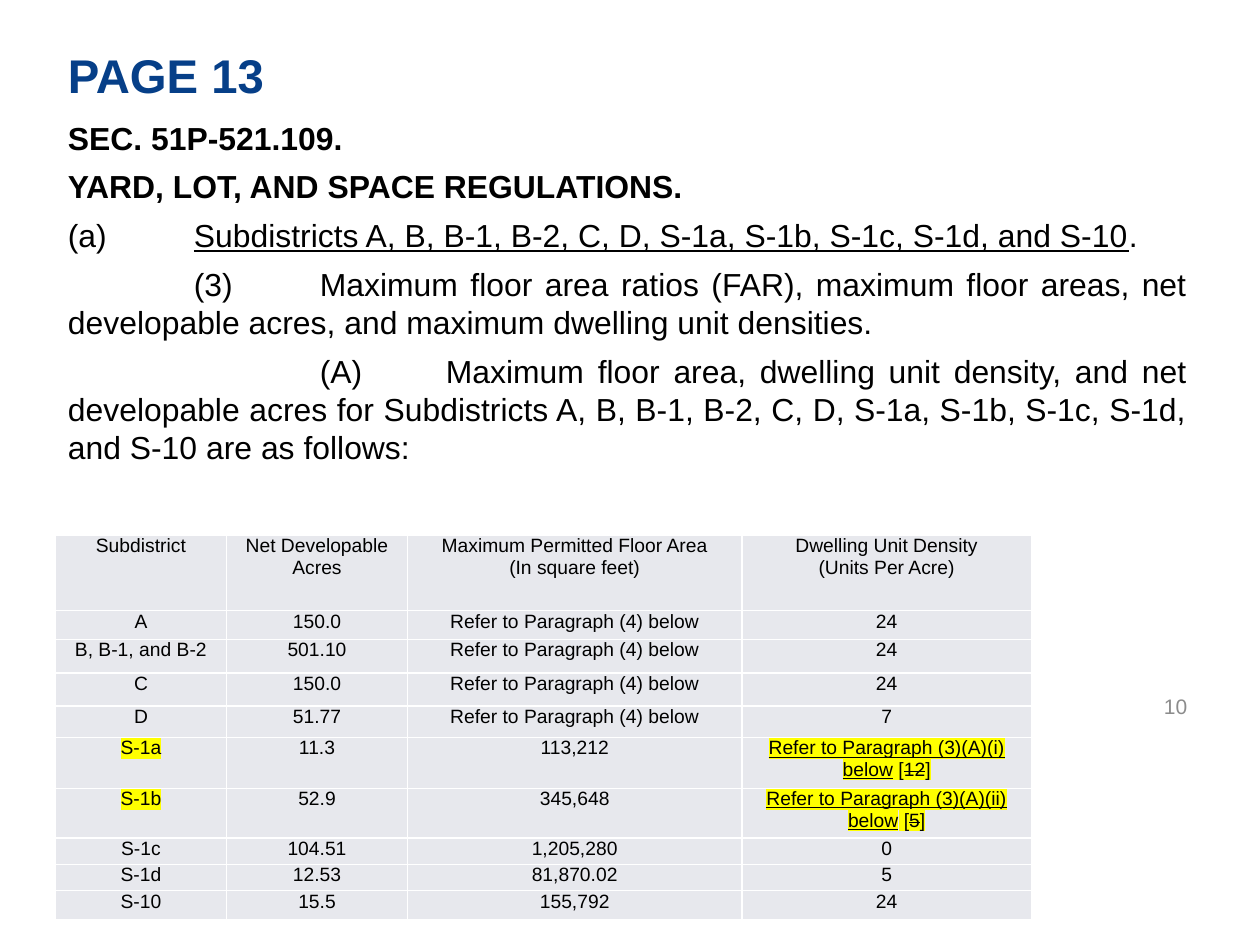
"""Build the slide on yard, lot and space regulations with its subdistrict table."""
import lxml.etree
import pptx
import pptx.dml.color
import pptx.enum.text
import pptx.oxml
import pptx.oxml.ns
import pptx.util

Pt = pptx.util.Pt
ALIGN = pptx.enum.text.PP_ALIGN
ANCHOR = pptx.enum.text.MSO_ANCHOR

THEME = {
    "font": "Arial",
    "title": "063F88", "text": "000000", "number": "8C8C8C",
    "cell": "E7E8ED", "border": "FFFFFF", "highlight": "FFFF00",
    "title_size": 27, "body_size": 18.2, "number_size": 12, "cell_size": 11,
}

TITLE = [[("PAGE 13", "bold")]]
NUMBER = [[("10", "")]]
BODY = [
    [("SEC. 51P-521.109.", "bold")],
    [("YARD, LOT, AND SPACE REGULATIONS.", "bold")],
    [("(a)\t", ""),
     ("Subdistricts A, B, B-1, B-2, C, D, S-1a, S-1b, S-1c, S-1d, and S-10", "underline"),
     (".", "")],
    [("\t(3)\tMaximum floor area ratios (FAR), maximum floor areas, net developable acres, "
      "and maximum dwelling unit densities.", "")],
    [("\t\t(A)\tMaximum floor area, dwelling unit density, and net developable acres for "
      "Subdistricts A, B, B-1, B-2, C, D, S-1a, S-1b, S-1c, S-1d, and S-10 are as follows:", "")],
]


def amended(clause, former):
    """Return the spans of a density that replaces a struck-out former value."""
    return [(f"Refer to Paragraph (3)(A)({clause}) below", "underline highlight"),
            (" [", "highlight"), (former, "strike highlight"), ("]", "highlight")]


FLOOR_REFERENCE = "Refer to Paragraph (4) below"
ROWS = [
    ("Subdistrict", "Net Developable Acres", "Maximum Permitted Floor Area\n(In square feet)",
     "Dwelling Unit Density\n(Units Per Acre)"),
    ("A", "150.0", FLOOR_REFERENCE, "24"),
    ("B, B-1, and B-2", "501.10", FLOOR_REFERENCE, "24"),
    ("C", "150.0", FLOOR_REFERENCE, "24"),
    ("D", "51.77", FLOOR_REFERENCE, "7"),
    ([("S-1a", "highlight")], "11.3", "113,212", amended("i", "12")),
    ([("S-1b", "highlight")], "52.9", "345,648", amended("ii", "5")),
    ("S-1c", "104.51", "1,205,280", "0"),
    ("S-1d", "12.53", "81,870.02", "5"),
    ("S-10", "15.5", "155,792", "24"),
]
COLUMN_WIDTHS = [97.75, 103.5, 191, 165.5]
ROW_HEIGHTS = [43, 16.5, 19, 19, 18, 29, 28.5, 15, 15, 16.5]
LEFT, TABLE_TOP = 31.7, 306
TAB_STEP, TAB_COUNT = 72, 3


def rgb(name):
    return pptx.dml.color.RGBColor.from_string(THEME[name])


def colour_element(parent, tag, name):
    element = lxml.etree.SubElement(parent, pptx.oxml.ns.qn(tag))
    lxml.etree.SubElement(element, pptx.oxml.ns.qn("a:srgbClr"), val=THEME[name])
    return element


def format_span(span, style, size, colour):
    font = span.font
    font.name, font.size = THEME["font"], Pt(size)
    font.bold = "bold" in style
    font.underline = "underline" in style
    font.color.rgb = rgb(colour)
    properties = span._r.get_or_add_rPr()
    if "strike" in style:
        properties.set("strike", "sngStrike")
    if "highlight" in style:
        mark = colour_element(properties, "a:highlight", "highlight")
        properties.find(pptx.oxml.ns.qn("a:solidFill")).addnext(mark)


def add_tabs(para):
    properties = para._p.get_or_add_pPr()
    stops = lxml.etree.SubElement(properties, pptx.oxml.ns.qn("a:tabLst"))
    for index in range(1, TAB_COUNT + 1):
        lxml.etree.SubElement(stops, pptx.oxml.ns.qn("a:tab"),
                              pos=str(Pt(index * TAB_STEP)), algn="l")


def write(frame, paragraphs, size, colour, align, after=0):
    frame.text = "\n".join("" for _ in paragraphs)
    for para, spans in zip(frame.paragraphs, paragraphs):
        para.alignment = align
        para.space_before, para.space_after = Pt(0), Pt(after)
        if any("\t" in text for text, _ in spans):
            add_tabs(para)
        for text, style in spans:
            span = para.add_run()
            span.text = text
            format_span(span, style, size, colour)


def add_text(page, place, paragraphs, kind, align, anchor, after=0):
    box = page.shapes.add_textbox(*map(Pt, place))
    frame = box.text_frame
    frame.word_wrap = True
    frame.vertical_anchor = anchor
    colour = "text" if kind == "body" else kind
    write(frame, paragraphs, THEME[kind + "_size"], colour, align, after)


def fill_cell(cell, content):
    cell.margin_left = cell.margin_right = Pt(5)
    cell.margin_top = cell.margin_bottom = Pt(0)
    if isinstance(content, str):
        paragraphs = [[(line, "")] for line in content.split("\n")]
    else:
        paragraphs = [content]
    write(cell.text_frame, paragraphs, THEME["cell_size"], "text", ALIGN.CENTER)
    properties = cell._tc.get_or_add_tcPr()
    for side in ("a:lnL", "a:lnR", "a:lnT", "a:lnB"):
        line = lxml.etree.SubElement(properties, pptx.oxml.ns.qn(side), w=str(Pt(1)))
        colour_element(line, "a:solidFill", "border")
    cell.fill.solid()
    cell.fill.fore_color.rgb = rgb("cell")


def add_density_table(page):
    table = page.shapes.add_table(
        len(ROWS), len(COLUMN_WIDTHS), Pt(LEFT), Pt(TABLE_TOP),
        Pt(sum(COLUMN_WIDTHS)), Pt(sum(ROW_HEIGHTS))).table
    for column, width in zip(table.columns, COLUMN_WIDTHS):
        column.width = Pt(width)
    for row, height, contents in zip(table.rows, ROW_HEIGHTS, ROWS):
        row.height = Pt(height)
        for cell, content in zip(row.cells, contents):
            fill_cell(cell, content)


def main():
    deck = pptx.Presentation()
    deck.slide_width, deck.slide_height = Pt(720), Pt(540)
    page = deck.slides.add_slide(deck.slide_layouts[6])
    add_text(page, (LEFT, 21.6, 620.6, 42.5), TITLE, "title", ALIGN.LEFT, ANCHOR.MIDDLE)
    add_text(page, (LEFT, 64.1, 653.8, 241.9), BODY, "body", ALIGN.JUSTIFY, ANCHOR.TOP, after=6)
    add_text(page, (523.5, 389, 162, 28.8), NUMBER, "number", ALIGN.RIGHT, ANCHOR.MIDDLE)
    add_density_table(page)
    deck.save("out.pptx")


if __name__ == "__main__":
    main()
